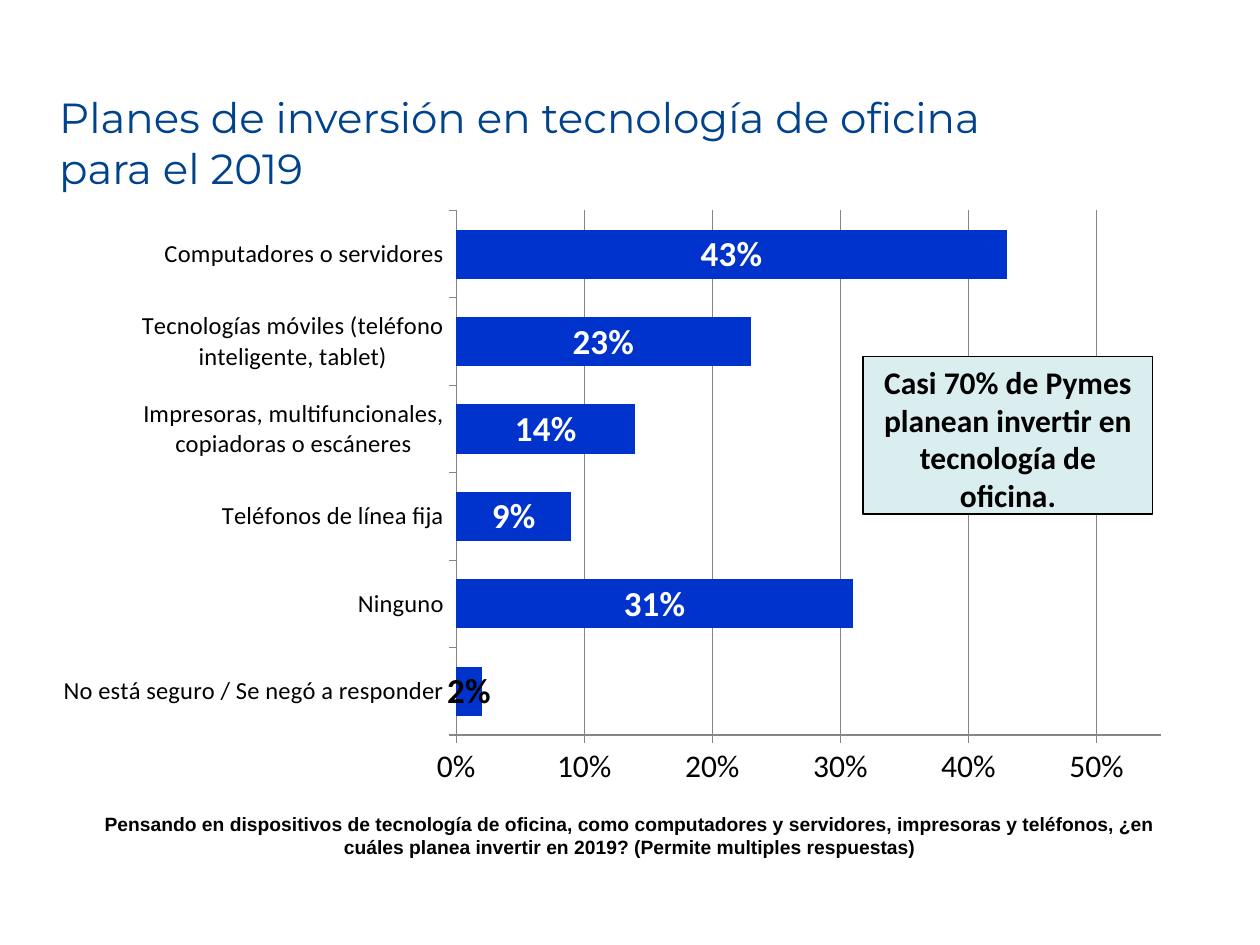
from lxml.etree import SubElement
from pptx import Presentation
from pptx.chart.data import CategoryChartData
from pptx.dml.color import RGBColor
from pptx.enum.chart import XL_CHART_TYPE, XL_LABEL_POSITION, XL_TICK_MARK
from pptx.enum.shapes import MSO_SHAPE
from pptx.enum.text import MSO_ANCHOR, MSO_AUTO_SIZE, PP_ALIGN
from pptx.oxml.ns import qn
from pptx.util import Inches, Pt

COLORS = {
    "title": "00438C",
    "bar": "0033CC",
    "label": "FFFFFF",
    "text": "000000",
    "callout": "DAEDEF",
    "grid": "868686",
}
FORMATS = {
    "title": {"name": "Montserrat", "size": Pt(24), "bold": False},
    "question": {"name": "Arial", "size": Pt(11), "bold": True},
    "callout": {"name": "Calibri", "size": Pt(18), "bold": True},
    "chart": {"name": "Calibri", "size": Pt(18)},
    "category": {"name": "Calibri", "size": Pt(14)},
    "label": {"name": "Calibri", "size": Pt(20), "bold": True},
}
INVESTMENT_PLANS = {
    "No está seguro / Se negó a responder": 0.02,
    "Ninguno": 0.31,
    "Teléfonos de línea fija": 0.09,
    "Impresoras, multifuncionales, copiadoras o escáneres": 0.14,
    "Tecnologías móviles (teléfono inteligente, tablet)": 0.23,
    "Computadores o servidores": 0.43,
}
PLOT_LAYOUT = {
    "layoutTarget": "inner",
    "xMode": "edge",
    "yMode": "edge",
    "x": 0.353,
    "y": 0.018,
    "w": 0.607,
    "h": 0.833,
}


def color(key):
    return RGBColor.from_string(COLORS[key])


def apply_format(font, style, color_key):
    for attribute, value in FORMATS[style].items():
        setattr(font, attribute, value)
    font.color.rgb = color(color_key)


def write(shape, text, style, color_key, align, anchor):
    frame = shape.text_frame
    frame.auto_size = MSO_AUTO_SIZE.NONE
    frame.word_wrap = True
    frame.vertical_anchor = anchor
    frame.text = text
    paragraph = frame.paragraphs[0]
    paragraph.alignment = align
    apply_format(paragraph.runs[0].font, style, color_key)


def place_title(slide, box):
    title = slide.shapes.title
    title.left, title.top, title.width, title.height = box
    write(title, "Planes de inversión en tecnología de oficina para el 2019",
          "title", "title", PP_ALIGN.LEFT, MSO_ANCHOR.BOTTOM)


def set_plot_layout(chart):
    plot_area = chart._chartSpace.chart.plotArea
    for previous in plot_area.findall(qn("c:layout")):
        plot_area.remove(previous)
    layout = SubElement(plot_area, qn("c:layout"))
    plot_area.insert(0, layout)
    manual = SubElement(layout, qn("c:manualLayout"))
    for tag, value in PLOT_LAYOUT.items():
        SubElement(manual, qn(f"c:{tag}")).set("val", str(value))


def place_chart(slide, box):
    plans = CategoryChartData(number_format="0%")
    plans.categories = list(INVESTMENT_PLANS)
    plans.add_series("Series 1", list(INVESTMENT_PLANS.values()))
    chart = slide.shapes.add_chart(XL_CHART_TYPE.BAR_CLUSTERED, *box, plans).chart
    chart.has_title = False
    chart.has_legend = False
    apply_format(chart.font, "chart", "text")
    set_plot_layout(chart)

    percentages, categories = chart.value_axis, chart.category_axis
    percentages.minimum_scale = 0
    percentages.maximum_scale = 0.55
    percentages.major_unit = 0.1
    percentages.has_major_gridlines = True
    percentages.tick_labels.number_format = "0%"
    percentages.tick_labels.number_format_is_linked = False
    apply_format(categories.tick_labels.font, "category", "text")
    for axis in (percentages, categories):
        axis.major_tick_mark = XL_TICK_MARK.OUTSIDE
        axis.minor_tick_mark = XL_TICK_MARK.NONE
    for line in (percentages.format.line, categories.format.line,
                 percentages.major_gridlines.format.line):
        line.color.rgb = color("grid")
        line.width = Pt(0.75)

    plot = chart.plots[0]
    plot.gap_width = 78
    plot.vary_by_categories = False
    bars = plot.series[0]
    bars.format.fill.solid()
    bars.format.fill.fore_color.rgb = color("bar")
    labels = bars.data_labels
    labels.show_value = True
    labels.number_format = "0%"
    labels.number_format_is_linked = False
    labels.position = XL_LABEL_POSITION.CENTER
    apply_format(labels.font, "label", "label")
    unsure_label = bars.points[0].data_label
    apply_format(unsure_label.font, "label", "text")
    unsure_label.position = XL_LABEL_POSITION.CENTER


def place_question(slide, box):
    question = slide.shapes.add_textbox(*box)
    write(question,
          "Pensando en dispositivos de tecnología de oficina, como computadores y "
          "servidores, impresoras y teléfonos, ¿en cuáles planea invertir en 2019? "
          "(Permite multiples respuestas)",
          "question", "text", PP_ALIGN.CENTER, MSO_ANCHOR.TOP)


def place_callout(slide, box):
    callout = slide.shapes.add_shape(MSO_SHAPE.RECTANGLE, *box)
    callout.shadow.inherit = False
    callout.fill.solid()
    callout.fill.fore_color.rgb = color("callout")
    callout.line.color.rgb = color("text")
    callout.line.width = Pt(0.75)
    write(callout, "Casi 70% de Pymes planean invertir en tecnología de oficina.",
          "callout", "text", PP_ALIGN.CENTER, MSO_ANCHOR.TOP)


def main():
    presentation = Presentation()
    presentation.slide_width = Inches(10)
    presentation.slide_height = Inches(7.5)
    slide = presentation.slides.add_slide(presentation.slide_layouts[5])
    regions = (
        (place_chart, (0.37, 1.58, 9.21, 5)),
        (place_title, (0.37, 0.33, 7.8, 1.25)),
        (place_question, (0.54, 6.4, 8.92, 0.47)),
        (place_callout, (6.85, 2.83, 2.3, 1.25)),
    )
    for place, box in regions:
        place(slide, [Inches(length) for length in box])
    presentation.save("out.pptx")


if __name__ == "__main__":
    main()
